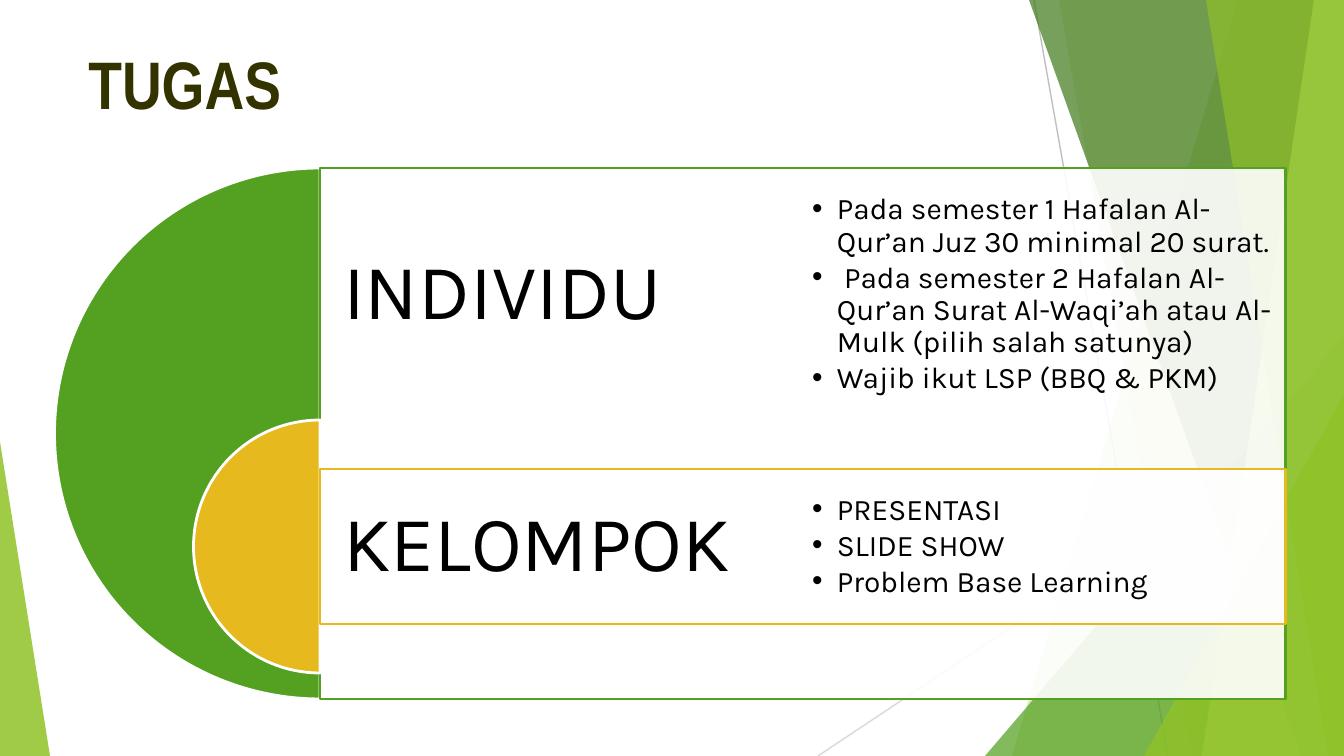
from pptx import Presentation, util as u
from pptx.dml.color import RGBColor
from pptx.enum import shapes, text
from pptx.oxml.ns import qn
from lxml import etree

PX = 9144000 / 1344
HUES = {"lime": "90C226", "green": "54A021", "moss": "3F7819", "pale": "C0E474",
        "gold": "E6B91E", "white": "FFFFFF", "black": "000000", "olive": "333300",
        "gray": "BFBFBF", "silver": "D9D9D9"}
KIND = shapes.MSO_SHAPE


def paint(item, hue, alpha=100, edge=None):
    item.shadow.inherit = False
    item.fill.solid()
    item.fill.fore_color.rgb = RGBColor.from_string(HUES[hue])
    if alpha < 100:
        clr = item.fill._xPr.find(qn("a:solidFill"))[0]
        etree.SubElement(clr, qn("a:alpha")).set("val", str(alpha * 1000))
    if edge:
        item.line.color.rgb = RGBColor.from_string(HUES[edge])
        item.line.width = u.Pt(1.5)
    else:
        item.line.fill.background()


def write(box, lines, look, pad, gap=0, dots=False):
    frame = box.text_frame
    frame.word_wrap = True
    frame.vertical_anchor = text.MSO_ANCHOR.MIDDLE
    for side in ("left", "top", "right", "bottom"):
        setattr(frame, "margin_" + side, round(pad * PX))
    for i, line in enumerate(lines):
        para = frame.add_paragraph() if i else frame.paragraphs[0]
        para.line_spacing = 0.9
        para.space_after = u.Pt(gap)
        run = para.add_run()
        run.text = line
        run.font.color.rgb = RGBColor.from_string(HUES["black"])
        for key, val in look.items():
            setattr(run.font, key, val)
        if dots:
            props = para._p.get_or_add_pPr()
            props.set("marL", str(round(25 * PX)))
            props.set("indent", str(round(-25 * PX)))
            etree.SubElement(props, qn("a:buFont")).set("typeface", "Arial")
            etree.SubElement(props, qn("a:buChar")).set("char", "•")


deck = Presentation()
deck.slide_width, deck.slide_height = round(1344 * PX), round(756 * PX)
slide = deck.slides.add_slide(deck.slide_layouts[5])
tree = slide.shapes

for x1, y1, x2, y2, hue in [(1034, 0, 1168, 756, "gray"), (1344, 406, 818, 756, "silver")]:
    ends = [round(n * PX) for n in (x1, y1, x2, y2)]
    ray = tree.add_connector(shapes.MSO_CONNECTOR.STRAIGHT, *ends)
    ray.line.color.rgb = RGBColor.from_string(HUES[hue])
    ray.line.width = u.Pt(0.75)
    etree.SubElement(ray._element.spPr, qn("a:effectLst"))

W, H = 1344, 756
backs = [
    ("band", (1238, 1012), "lime", 30),
    ("band", (1059, 1192), "lime", 20),
    ("wedge", (985, 336, 359, 420, 1), "green", 72),
    ("band", (1029, 1301), "moss", 70),
    ("band", (1314, 1202), "pale", 70),
    ("band", (1206, 1328), "lime", 65),
    ("wedge", (1144, 395, 200, 361, 1), "lime", 80),
    ("wedge", (0, 442, 50, 314, 0), "lime", 85),
]
for kind, place, hue, alpha in backs:
    if kind == "band":
        top, foot = place
        pen = tree.build_freeform(top, 0, scale=PX)
        pen.add_line_segments([(W, 0), (W, H), (foot, H)], close=True)
        part = pen.convert_to_shape()
    else:
        part = tree.add_shape(KIND.ISOSCELES_TRIANGLE, *[round(n * PX) for n in place[:4]])
        part.adjustments[0] = place[4]
    paint(part, hue, alpha)

title = tree.title
spot = {"left": 75, "top": 36, "width": 948, "height": 176}
for key, val in spot.items():
    setattr(title, key, round(val * PX))
title.text_frame.text = "TUGAS"
title.text_frame.vertical_anchor = text.MSO_ANCHOR.TOP
head = title.text_frame.paragraphs[0]
head.alignment = text.PP_ALIGN.LEFT
face = head.runs[0].font
for key, val in {"name": "Arial Narrow", "size": u.Pt(36), "bold": True}.items():
    setattr(face, key, val)
face.color.rgb = RGBColor.from_string(HUES["olive"])

MID, COL, ROW = 320, 482, 253
big = {"name": "Karla", "size": u.Pt(42)}
small = {"name": "Karla", "size": u.Pt(16)}
groups = [
    ("INDIVIDU", "green", 168, 531, 168, 531, ROW,
     ["Pada semester 1 Hafalan Al-Qur’an Juz 30 minimal 20 surat.",
      " Pada semester 2 Hafalan Al-Qur’an Surat Al-Waqi’ah atau Al-Mulk (pilih salah satunya)",
      "Wajib ikut LSP (BBQ & PKM)"]),
    ("KELOMPOK", "gold", 420, ROW, 469, 155, 155,
     ["PRESENTASI", "SLIDE SHOW", "Problem Base Learning"]),
]
for name, hue, top, size, y, tall, high, items in groups:
    pie = tree.add_shape(KIND.PIE, *[round(n * PX) for n in (MID - size / 2, top, size, size)])
    pie.adjustments[0], pie.adjustments[1] = 54, 162
    paint(pie, hue, edge="white")
    card = tree.add_shape(KIND.RECTANGLE, *[round(n * PX) for n in (MID, y, 2 * COL + 2, tall)])
    paint(card, "white", 90, hue)
    label = tree.add_textbox(*[round(n * PX) for n in (MID, y, COL, high)])
    write(label, [name], big, 23)
    label.text_frame.paragraphs[0].alignment = text.PP_ALIGN.JUSTIFY
    notes = tree.add_textbox(*[round(n * PX) for n in (MID + COL, top, COL, ROW)])
    write(notes, items, small, 10, 2, True)

deck.save("out.pptx")
